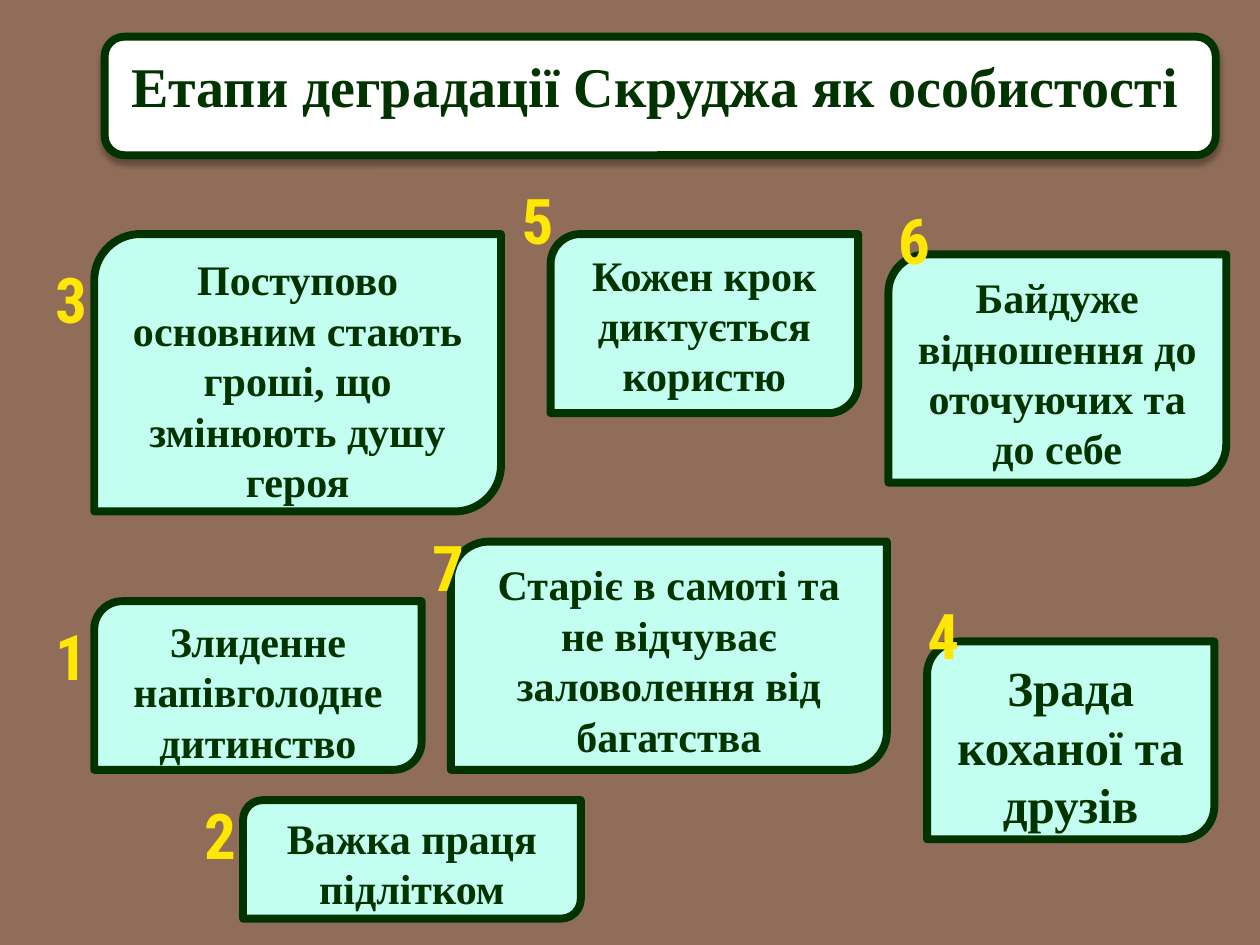
"""Build the slide on the stages of Scrooge's decline."""
from dataclasses import dataclass

import lxml.etree
import pptx
import pptx.dml.color
import pptx.enum.shapes
import pptx.enum.text
import pptx.oxml.ns
import pptx.util

Cm = pptx.util.Cm
Pt = pptx.util.Pt
Kind = pptx.enum.shapes.MSO_SHAPE
Anchor = pptx.enum.text.MSO_ANCHOR
qn = pptx.oxml.ns.qn


@dataclass(frozen=True)
class Theme:
    background: str = "906D58"
    title_fill: str = "FFFFFF"
    stage_fill: str = "C2FFF0"
    ink: str = "003300"
    number_top: str = "FFE701"
    number_bottom: str = "FE3E02"
    text_font: str = "Times New Roman"
    number_font: str = "Roboto Condensed"
    title_size: int = 32
    stage_size: int = 24
    large_size: int = 28
    number_size: int = 36
    line_width: float = 4.5


@dataclass(frozen=True)
class Area:
    left: float
    top: float
    width: float
    height: float

    def lengths(self) -> tuple:
        return Cm(self.left), Cm(self.top), Cm(self.width), Cm(self.height)


@dataclass(frozen=True)
class Stage:
    number: int
    text: str
    area: Area
    number_left: float
    number_top: float
    size: int = Theme.stage_size


THEME = Theme()
TITLE = "Етапи деградації Скруджа як особистості"
TITLE_FRAME = Area(2.11, 0.74, 22.4, 2.39)
TITLE_TEXT = Area(1.9, 0.53, 22.61, 2.39)
NUMBER_WIDTH, NUMBER_HEIGHT = 1.45, 2.41
STAGES = (
    Stage(1, "Злиденне напівголодне дитинство", Area(1.9, 12.12, 6.6, 3.4), 0.71, 12.32),
    Stage(2, "Важка праця підлітком", Area(4.9, 16.13, 6.81, 2.39), 3.71, 15.93),
    Stage(3, "Поступово основним стають гроші, що змінюють душу героя",
          Area(1.9, 4.72, 8.2, 5.59), 0.71, 5.13),
    Stage(4, "Зрада коханої та друзів", Area(18.69, 12.93, 5.79, 3.99), 18.29, 11.91,
          THEME.large_size),
    Stage(5, "Кожен крок диктується користю", Area(11.1, 4.72, 6.2, 3.61), 10.11, 3.53),
    Stage(6, "Байдуже відношення до оточуючих та до себе",
          Area(17.91, 5.13, 6.81, 4.6), 17.7, 3.94),
    Stage(7, "Старіє в самоті та не відчуває заловолення від багатства",
          Area(9.09, 10.92, 8.79, 4.6), 8.31, 10.52),
)


def rgb(value: str) -> pptx.dml.color.RGBColor:
    """Return the colour for a hexadecimal value."""
    return pptx.dml.color.RGBColor.from_string(value)


def write(box, text: str, font_name: str, size: int, anchor, wrap: bool = True):
    """Write one bold centred paragraph and return it."""
    frame = box.text_frame
    frame.word_wrap = wrap
    frame.vertical_anchor = anchor
    para = frame.paragraphs[0]
    para.text = text
    para.alignment = pptx.enum.text.PP_ALIGN.CENTER
    para.font.name = font_name
    para.font.size = Pt(size)
    para.font.bold = True
    para.font.color.rgb = rgb(THEME.ink)
    return para


def add_panel(slide, kind, area: Area, fill: str):
    """Add an outlined panel without a shadow."""
    panel = slide.shapes.add_shape(kind, *area.lengths())
    panel.shadow.inherit = False
    panel.fill.solid()
    panel.fill.fore_color.rgb = rgb(fill)
    panel.line.color.rgb = rgb(THEME.ink)
    panel.line.width = Pt(THEME.line_width)
    return panel


def add_shadow(panel) -> None:
    """Give a panel a soft shadow straight below it."""
    effects = panel.element.spPr.find(qn("a:effectLst"))
    shadow = lxml.etree.SubElement(
        effects, qn("a:outerShdw"), blurRad=str(Pt(3.5)), dist=str(Pt(2.2)),
        dir="5400000", rotWithShape="0")
    color = lxml.etree.SubElement(shadow, qn("a:srgbClr"), val="000000")
    lxml.etree.SubElement(color, qn("a:alpha"), val="32000")


def add_title(slide) -> None:
    """Add the title frame and its text."""
    add_shadow(add_panel(slide, Kind.ROUNDED_RECTANGLE, TITLE_FRAME, THEME.title_fill))
    box = slide.shapes.add_textbox(*TITLE_TEXT.lengths())
    write(box, TITLE, THEME.text_font, THEME.title_size, Anchor.MIDDLE)


def add_stage(slide, stage: Stage) -> None:
    """Add the panel that describes a stage."""
    panel = add_panel(slide, Kind.ROUND_2_DIAG_RECTANGLE, stage.area, THEME.stage_fill)
    write(panel, stage.text, THEME.text_font, stage.size, Anchor.TOP)


def add_number(slide, stage: Stage) -> None:
    """Add the gradient number of a stage."""
    area = Area(stage.number_left, stage.number_top, NUMBER_WIDTH, NUMBER_HEIGHT)
    box = slide.shapes.add_textbox(*area.lengths())
    para = write(box, str(stage.number), THEME.number_font, THEME.number_size,
                 Anchor.TOP, wrap=False)
    fill = para.font.fill
    fill.gradient()
    fill.gradient_angle = 270
    for stop, color in zip(fill.gradient_stops, (THEME.number_top, THEME.number_bottom)):
        stop.color.rgb = rgb(color)


def main() -> None:
    """Build and save the deck."""
    deck = pptx.Presentation()
    deck.slide_width, deck.slide_height = Cm(25.4), Cm(19.05)
    slide = deck.slides.add_slide(deck.slide_layouts[6])
    slide.background.fill.solid()
    slide.background.fill.fore_color.rgb = rgb(THEME.background)
    add_title(slide)
    for stage in STAGES:
        add_stage(slide, stage)
    for stage in STAGES:
        add_number(slide, stage)
    deck.save("out.pptx")


if __name__ == "__main__":
    main()
